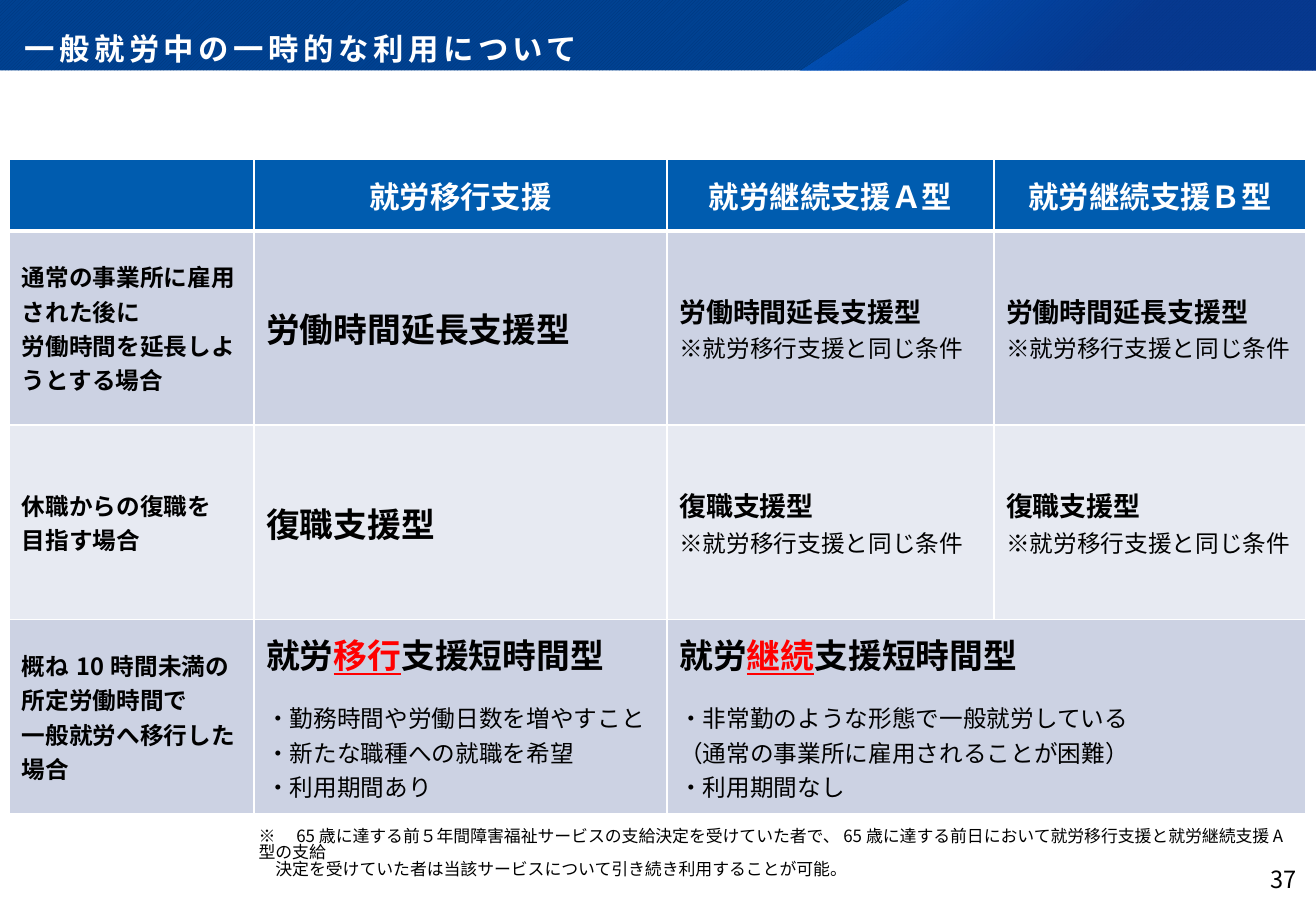
from pptx import Presentation
from pptx.dml.color import RGBColor
from pptx.enum.dml import MSO_PATTERN
from pptx.enum.shapes import MSO_SHAPE
from pptx.enum.text import MSO_ANCHOR, PP_ALIGN
from pptx.oxml import parse_xml
from pptx.oxml.ns import qn
from pptx.util import Pt

# Content: a paragraph is a list of runs, a run is (text, size, bold, mark)
TITLE = "一般就労中の一時的な利用について"
HEADS = ["", "就労移行支援", "就労継続支援Ａ型", "就労継続支援Ｂ型"]
CASES = [
    ["通常の事業所に雇用された後に", "労働時間を延長しようとする場合"],
    ["休職からの復職を", "目指す場合"],
    ["概ね10時間未満の所定労働時間で", "一般就労へ移行した場合"],
]
TYPES = ["労働時間延長支援型", "復職支援型"]
SAME = "※就労移行支援と同じ条件"
SHORT = [
    ("移行", ["・勤務時間や労働日数を増やすこと", "・新たな職種への就職を希望", "・利用期間あり"]),
    ("継続", ["・非常勤のような形態で一般就労している",
            "（通常の事業所に雇用されることが困難）", "・利用期間なし"]),
]
NOTES = [
    "※　65歳に達する前５年間障害福祉サービスの支給決定を受けていた者で、65歳に達する前日において就労移行支援と就労継続支援A型の支給",
    "　決定を受けていた者は当該サービスについて引き続き利用することが可能。",
]
PAGE = "37"

COLORS = {"white": "FFFFFF", "black": "000000", "red": "FF0000", "head": "005CAF",
          "odd": "CCD2E3", "even": "E7EAF2", "band": "004292", "hatch": "003579",
          "glow": "0064DF", "deep": "0C338E"}
SANS, LATIN, BRAND = "Noto Sans CJK JP", "Arial", "Roboto"
MIDDLE, BOTTOM = MSO_ANCHOR.MIDDLE, MSO_ANCHOR.BOTTOM
LEFT, CENTER, RIGHT = PP_ALIGN.LEFT, PP_ALIGN.CENTER, PP_ALIGN.RIGHT
RECT, HATCH = MSO_SHAPE.RECTANGLE, MSO_PATTERN.DARK_UPWARD_DIAGONAL
NS = 'xmlns:a="http://schemas.openxmlformats.org/drawingml/2006/main"'

WIDE, HIGH, BAND = 1083, 750, 58
COLS, ROWS = [201, 340, 269, 257], [59, 160, 160, 160]


def px(n):
    return n * 9144  # 100 px to the inch


def rgb(name):
    return RGBColor.from_string(COLORS[name])


def add_run(para, text, size, bold=False, color="black", face=SANS, line=False):
    run = para.add_run()
    run.text = text
    font = run.font
    font.size, font.bold, font.name = Pt(size), bold, face
    font.color.rgb = rgb(color)
    if line:
        font.underline = True
    east = font._element.makeelement(qn("a:ea"), {"typeface": SANS})
    font._element.find(qn("a:latin")).addnext(east)
    return run


def fill_text(frame, paras, align=LEFT, **style):
    frame.word_wrap = True
    for i, runs in enumerate(paras):
        para = frame.paragraphs[0] if i == 0 else frame.add_paragraph()
        para.alignment = align
        for text, size, bold, mark in runs:
            look = {"color": "red", "line": True} if mark else {}
            add_run(para, text, size, bold, **{**style, **look})


def add_box(box, paras, align=LEFT):
    frame = slide.shapes.add_textbox(*map(px, box)).text_frame
    frame.vertical_anchor = MIDDLE
    fill_text(frame, paras, align)
    return frame


def put_cell(row, col, paras, align=LEFT, **style):
    cell = grid.cell(row, col)
    cell.vertical_anchor = MIDDLE
    fill_text(cell.text_frame, paras, align, **style)
    return cell


def edge_cell(cell, low):
    props = cell._tc.get_or_add_tcPr()
    for i, side in enumerate(["L", "R", "T", "B"]):
        wide = Pt(low if side == "B" else 1)
        props.insert(i, parse_xml(
            f'<a:ln{side} {NS} w="{wide}"><a:solidFill><a:srgbClr val="{COLORS["white"]}"/>'
            f'</a:solidFill></a:ln{side}>'))


deck = Presentation()
deck.slide_width, deck.slide_height = px(WIDE), px(HIGH)
slide = deck.slides.add_slide(deck.slide_layouts[5])

# Header band, with a glowing slanted part, behind the title
band = slide.shapes.add_shape(RECT, 0, 0, px(WIDE), px(BAND))
band.fill.patterned()
band.fill.pattern = HATCH
band.fill.fore_color.rgb, band.fill.back_color.rgb = rgb("hatch"), rgb("band")
pen = slide.shapes.build_freeform(749, 0, scale=px(1))
pen.add_line_segments([(WIDE, 0), (WIDE, BAND), (658, BAND)], close=True)
slant = pen.convert_to_shape()
slant.fill.background()
stops = "".join(
    f'<a:gs pos="{pos}000"><a:srgbClr val="{COLORS[name]}"><a:alpha val="{alpha}000"/></a:srgbClr></a:gs>'
    for pos, name, alpha in [(0, "glow", 50), (62, "deep", 55)])
blank = slant._element.spPr.find(qn("a:noFill"))
blank.addnext(parse_xml(
    f'<a:gradFill {NS}><a:gsLst>{stops}</a:gsLst><a:path path="circle">'
    '<a:fillToRect r="100000" b="100000"/></a:path></a:gradFill>'))
slant._element.spPr.remove(blank)
for i, part in enumerate([band, slant]):
    part.line.fill.background()
    part.shadow.inherit = False
    slide.shapes._spTree.insert(2 + i, part._element)

# Title
title = slide.shapes.title
title.left, title.top, title.width, title.height = map(px, (0, 0, WIDE, 79))
frame = title.text_frame
frame.vertical_anchor, frame.word_wrap = BOTTOM, True
frame.margin_left = frame.margin_top = frame.margin_right = px(20)
frame.margin_bottom = px(24)
para = frame.paragraphs[0]
para.alignment, para.line_spacing = LEFT, 0.9
run = add_run(para, TITLE, 18, True, "white", BRAND)
run.font._element.set("spc", "270")

# Table
frame = slide.shapes.add_table(len(ROWS), len(COLS), *map(px, (8, 131, sum(COLS), sum(ROWS))))
grid = frame.table
for col, wide in zip(grid.columns, COLS):
    col.width = px(wide)
for row, high in zip(grid.rows, ROWS):
    row.height = px(high)
for r, tone in enumerate(["head", "odd", "even", "odd"]):
    for c in range(len(COLS)):
        cell = grid.cell(r, c)
        cell.fill.solid()
        cell.fill.fore_color.rgb = rgb(tone)
        edge_cell(cell, 1 if r else 3)
grid.cell(3, 2).merge(grid.cell(3, 3))

for c, head in enumerate(HEADS):
    if head:
        put_cell(0, c, [[(head, 18, True, False)]], CENTER, color="white", face=LATIN)
for r, case in enumerate(CASES, 1):
    put_cell(r, 0, [[(text, 14, True, False)] for text in case])
for r, kind in enumerate(TYPES, 1):
    put_cell(r, 1, [[(kind, 20, True, False)]], face=LATIN)
    for c in (2, 3):
        put_cell(r, c, [[(kind, 16, True, False)], [(SAME, 14, False, False)]])
for c, (word, points) in enumerate(SHORT, 1):
    name = [("就労", 20, True, False), (word, 20, True, True), ("支援短時間型", 20, True, False)]
    cell = put_cell(3, c, [name] + [[(text, 14, False, False)] for text in points])
    cell.text_frame.paragraphs[0].space_after = Pt(13)
grid.cell(3, 1).margin_right = px(4)

# Footnote and page number
note = add_box((203, 670, 872, 66), [[(text, 10, False, False)] for text in NOTES])
for para in note.paragraphs:
    para.line_spacing = 0.82
add_box((844, 704, 233, 40), [[(PAGE, 14, False, False)]], RIGHT)

deck.save("out.pptx")
